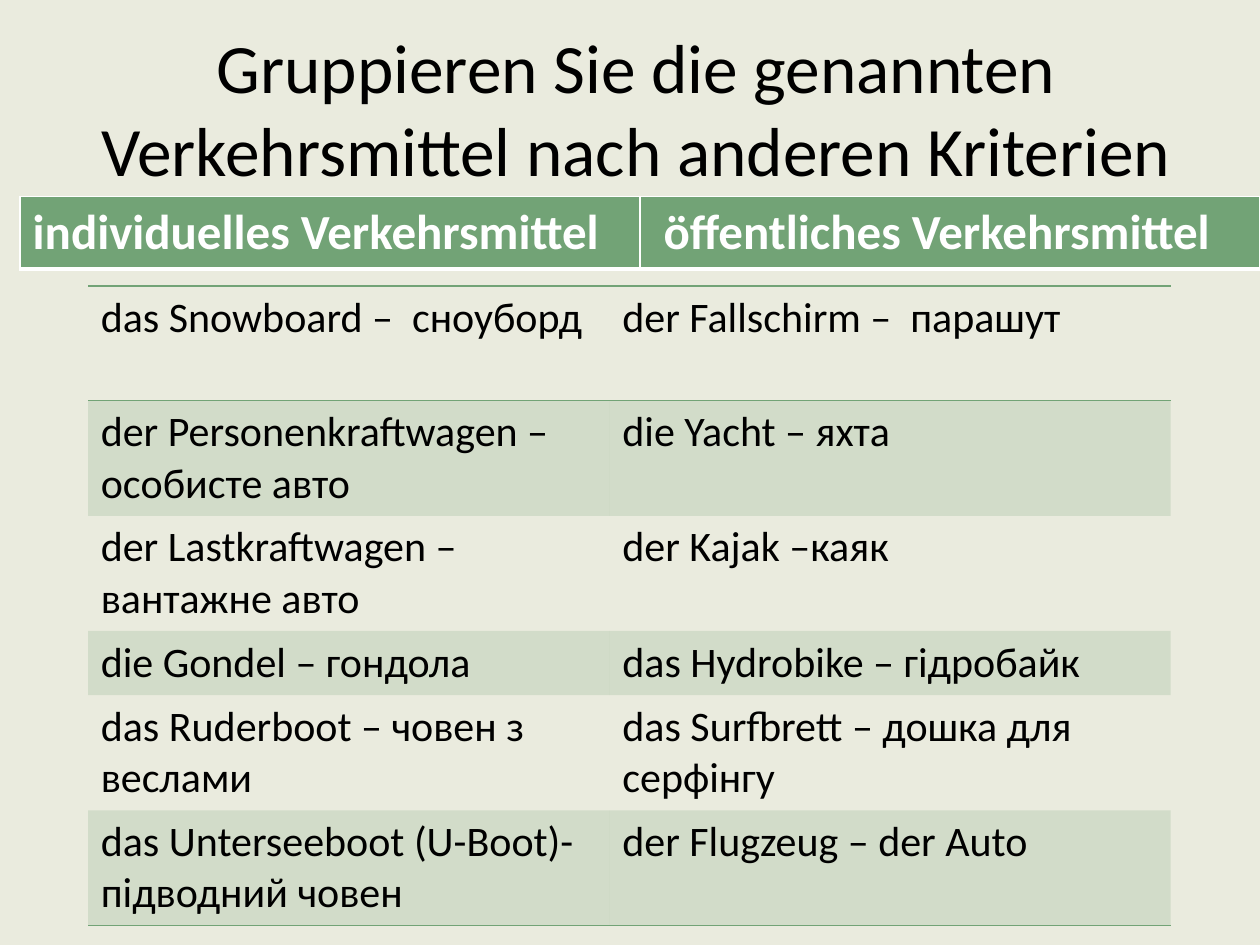
from dataclasses import dataclass

from lxml import etree
from pptx import Presentation
from pptx.dml.color import RGBColor
from pptx.enum.text import MSO_ANCHOR, PP_ALIGN
from pptx.oxml.ns import qn
from pptx.util import Inches, Pt

CENTER = PP_ALIGN.CENTER
MIDDLE = MSO_ANCHOR.MIDDLE
FONT = "Calibri"
COLORS = {"background": "EAEBDE", "green": "72A376", "white": "FFFFFF", "text": "000000"}
BAND_OPACITY = 20
TITLE_ONLY = 5

CRITERIA = ("individuelles Verkehrsmittel", " öffentliches Verkehrsmittel")
VEHICLES = [
    ("das Snowboard –  сноуборд", "der Fallschirm –  парашут"),
    ("der Personenkraftwagen – особисте авто", "die Yacht – яхта"),
    ("der Lastkraftwagen – вантажне авто", "der Kajak –каяк"),
    ("die Gondel – гондола", "das Hydrobike – гідробайк"),
    ("das Ruderboot – човен з веслами", "das Surfbrett – дошка для серфінгу"),
    ("das Unterseeboot (U-Boot)- підводний човен", "der Flugzeug – der Auto"),
]
ONE_LINE, TWO_LINES = 0.51, 0.91


@dataclass
class CellStyle:
    size: float
    color: str
    bold: bool
    fill: str | None
    opacity: int
    borders: dict[str, tuple[str, float]]  # side L, R, T or B: colour and width


def rgb(name: str) -> RGBColor:
    return RGBColor.from_string(COLORS[name])


def format_runs(frame, size: float, color: str, bold: bool = False) -> None:
    for paragraph in frame.paragraphs:
        for run in paragraph.runs:
            run.font.name = FONT
            run.font.size = Pt(size)
            run.font.bold = bold
            run.font.color.rgb = rgb(color)


def set_borders(cell, borders: dict[str, tuple[str, float]]) -> None:
    """Draw the given sides and hide the others."""
    properties = cell._tc.get_or_add_tcPr()
    for side in "LRTB":
        line = etree.SubElement(properties, qn(f"a:ln{side}"))
        if side in borders:
            color, width = borders[side]
            line.set("w", str(Pt(width)))
            fill = etree.SubElement(line, qn("a:solidFill"))
            etree.SubElement(fill, qn("a:srgbClr"), val=COLORS[color])
        else:
            etree.SubElement(line, qn("a:noFill"))


def set_fill(cell, color: str | None, opacity: int) -> None:
    if color is None:
        cell.fill.background()
        return
    cell.fill.solid()
    cell.fill.fore_color.rgb = rgb(color)
    if opacity < 100:
        solid = cell._tc.tcPr.find(qn("a:solidFill"))
        etree.SubElement(solid[0], qn("a:alpha"), val=str(opacity * 1000))


def style_cell(cell, text: str, style: CellStyle) -> None:
    cell.text_frame.text = text
    format_runs(cell.text_frame, style.size, style.color, style.bold)
    set_borders(cell, style.borders)
    set_fill(cell, style.fill, style.opacity)


def add_grid(slide, left: float, top: float, widths: list[float], heights: list[float]):
    table = slide.shapes.add_table(
        len(heights), len(widths), Inches(left), Inches(top),
        Inches(sum(widths)), Inches(sum(heights)),
    ).table
    table.first_row = table.horz_banding = False
    for column, width in zip(table.columns, widths):
        column.width = Inches(width)
    for row, height in zip(table.rows, heights):
        row.height = Inches(height)
    return table


def add_title(slide) -> None:
    title = slide.shapes.title
    title.left, title.top = Inches(0.55), Inches(0.23)
    title.width, title.height = Inches(9), Inches(1.25)
    frame = title.text_frame
    frame.text = "Gruppieren Sie die genannten Verkehrsmittel nach anderen Kriterien"
    frame.word_wrap = True
    frame.vertical_anchor = MIDDLE
    frame.paragraphs[0].alignment = CENTER
    format_runs(frame, 39.6, "text")


def add_criteria(slide) -> None:
    table = add_grid(slide, 0.16, 1.56, [4.92, 4.92], [0.57])
    borders = {side: ("white", 1) for side in "LRT"} | {"B": ("white", 3)}
    style = CellStyle(28, "white", True, "green", 100, borders)
    for column, criterion in enumerate(CRITERIA):
        style_cell(table.cell(0, column), criterion, style)


def add_vehicles(slide) -> None:
    heights = [ONE_LINE if pair[0].startswith("die Gondel") else TWO_LINES for pair in VEHICLES]
    table = add_grid(slide, 0.7, 2.27, [4.14, 4.45], heights)
    rule = ("green", 1)
    ruled_sides = {0: "TB", 1: "T", len(VEHICLES) - 1: "B"}
    for row, pair in enumerate(VEHICLES):
        borders = {side: rule for side in ruled_sides.get(row, "")}
        band = "green" if row % 2 else None
        style = CellStyle(24, "text", False, band, BAND_OPACITY, borders)
        for column, vehicle in enumerate(pair):
            style_cell(table.cell(row, column), vehicle, style)


def main() -> None:
    prs = Presentation()
    prs.slide_width, prs.slide_height = Inches(10), Inches(7.5)
    slide = prs.slides.add_slide(prs.slide_layouts[TITLE_ONLY])
    slide.background.fill.solid()
    slide.background.fill.fore_color.rgb = rgb("background")
    add_title(slide)
    add_criteria(slide)
    add_vehicles(slide)
    prs.save("out.pptx")


if __name__ == "__main__":
    main()
